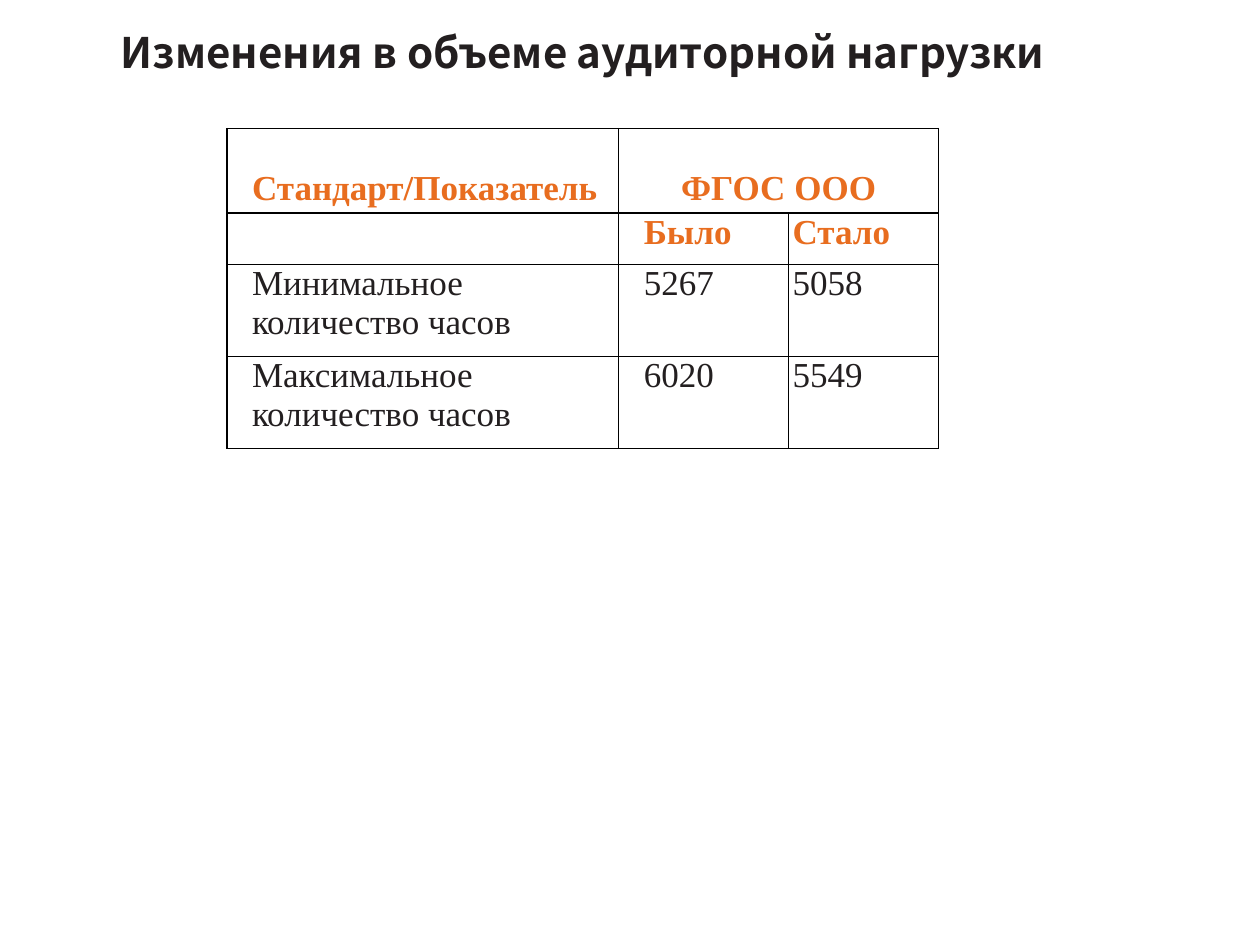
import lxml.etree
import pptx
import pptx.dml.color
import pptx.enum.text
import pptx.oxml.ns
import pptx.util

BLACK = pptx.dml.color.RGBColor(0x00, 0x00, 0x00)
WHITE = pptx.dml.color.RGBColor(0xFF, 0xFF, 0xFF)
INK = pptx.dml.color.RGBColor(0x23, 0x1F, 0x20)
ORANGE = pptx.dml.color.RGBColor(0xE8, 0x6D, 0x1F)
COLUMNS = [3.11, 1.35, 1.19]
ROWS = [0.67, 0.41, 0.73, 0.73]
INDENTS = [0.2, 0.2, 0.03]
SPACES = [0, 3.1, 3.4, 3.4]
HOURS = [
    ["Стандарт/Показатель", "ФГОС ООО", ""],
    ["", "Было", "Стало"],
    ["Минимальное количество часов", "5267", "5058"],
    ["Максимальное количество часов", "6020", "5549"],
]


def add_run(paragraph, text, font, size, color, bold):
    run = paragraph.add_run()
    run.text = text
    run.font.name = font
    run.font.size = pptx.util.Pt(size)
    run.font.color.rgb = color
    run.font.bold = bold
    properties = run.font._element
    for tag in ("a:ea", "a:cs"):
        lxml.etree.SubElement(properties, pptx.oxml.ns.qn(tag), typeface=font)


def add_borders(cell):
    properties = cell._tc.get_or_add_tcPr()
    for position, side in enumerate(("a:lnL", "a:lnR", "a:lnT", "a:lnB")):
        line = lxml.etree.Element(pptx.oxml.ns.qn(side), w=str(pptx.util.Pt(1)))
        fill = lxml.etree.SubElement(line, pptx.oxml.ns.qn("a:solidFill"))
        lxml.etree.SubElement(fill, pptx.oxml.ns.qn("a:srgbClr"), val=str(BLACK))
        properties.insert(position, line)


presentation = pptx.Presentation()
presentation.slide_width = pptx.util.Inches(10)
presentation.slide_height = pptx.util.Inches(7.5)
slide = presentation.slides.add_slide(presentation.slide_layouts[6])

title = slide.shapes.add_textbox(
    pptx.util.Inches(0.86), pptx.util.Inches(0.16),
    pptx.util.Inches(7.85), pptx.util.Inches(0.5))
title.text_frame.word_wrap = False
title.text_frame.auto_size = pptx.enum.text.MSO_AUTO_SIZE.SHAPE_TO_FIT_TEXT
title.text_frame.vertical_anchor = pptx.enum.text.MSO_ANCHOR.MIDDLE
add_run(title.text_frame.paragraphs[0], "Изменения в объеме аудиторной нагрузки",
        "Noto Sans CJK SC", 24, INK, True)

table = slide.shapes.add_table(
    len(ROWS), len(COLUMNS), pptx.util.Inches(1.8), pptx.util.Inches(1.02),
    pptx.util.Inches(sum(COLUMNS)), pptx.util.Inches(sum(ROWS))).table
table.first_row = False
table.horz_banding = False
for column, width in zip(table.columns, COLUMNS):
    column.width = pptx.util.Inches(width)
for row, height in zip(table.rows, ROWS):
    row.height = pptx.util.Inches(height)
table.cell(0, 1).merge(table.cell(0, 2))

for row, texts in enumerate(HOURS):
    for column, text in enumerate(texts):
        cell = table.cell(row, column)
        cell.margin_top = cell.margin_right = cell.margin_bottom = 0
        cell.margin_left = pptx.util.Inches(INDENTS[column])
        cell.fill.solid()
        cell.fill.fore_color.rgb = WHITE
        add_borders(cell)
        paragraph = cell.text_frame.paragraphs[0]
        paragraph.space_before = pptx.util.Pt(SPACES[row])
        if row == 0:
            cell.vertical_anchor = pptx.enum.text.MSO_ANCHOR.BOTTOM
            cell.margin_bottom = pptx.util.Inches(0.04)
            if column == 1:
                cell.margin_left = 0
                paragraph.alignment = pptx.enum.text.PP_ALIGN.CENTER
        if text:
            header = row < 2
            add_run(paragraph, text, "Times New Roman", 20,
                    ORANGE if header else INK, header)

presentation.save("out.pptx")
